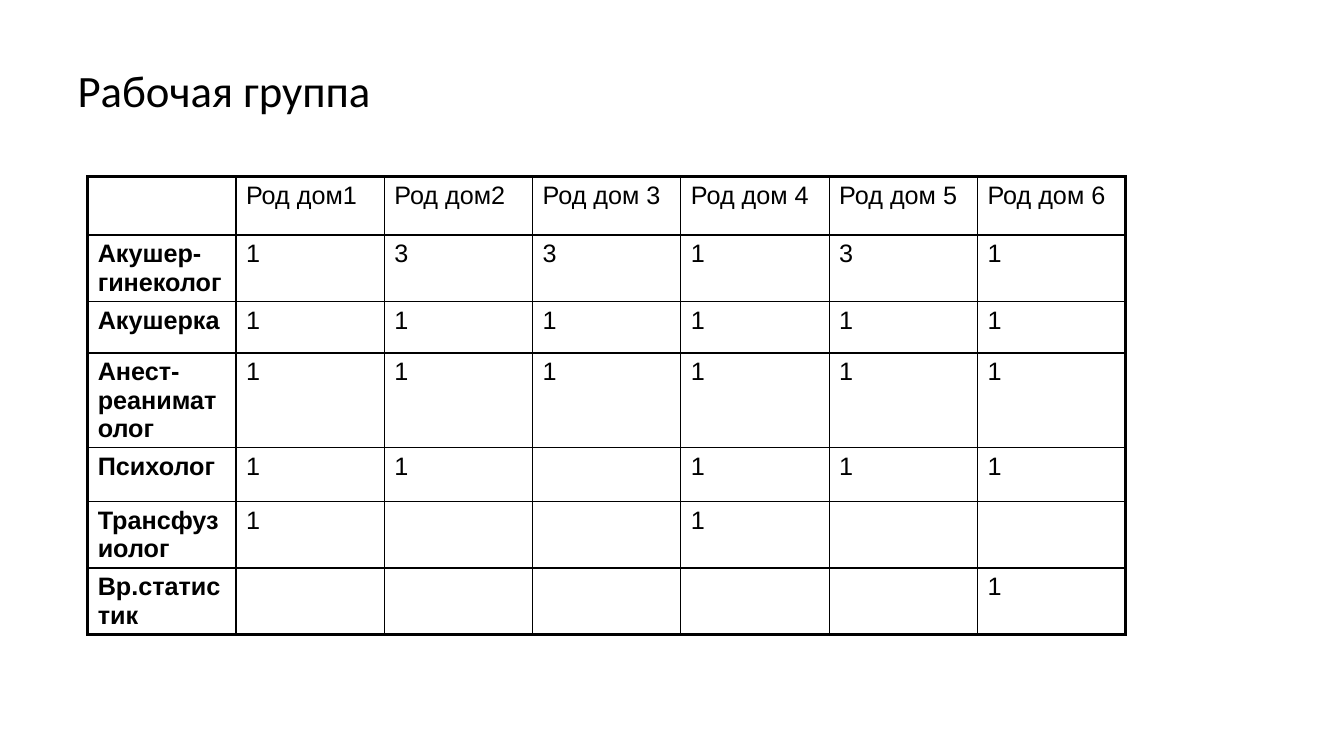
from lxml import etree
from pptx import Presentation
from pptx import util as u
from pptx.dml.color import RGBColor
from pptx.enum import text
from pptx.oxml import ns

BLACK = RGBColor(0, 0, 0)
THIN, THICK = 1, 2.25
ROWS = [
    ("", "Род дом1", "Род дом2", "Род дом 3", "Род дом 4", "Род дом 5", "Род дом 6"),
    ("Акушер-гинеколог", "1", "3", "3", "1", "3", "1"),
    ("Акушерка", "1", "1", "1", "1", "1", "1"),
    ("Анест-реаниматолог", "1", "1", "1", "1", "1", "1"),
    ("Психолог", "1", "1", "", "1", "1", "1"),
    ("Трансфузиолог", "1", "", "", "1", "", ""),
    ("Вр.статистик", "", "", "", "", "", "1"),
]
HEIGHTS = [1.47, 1.35, 1.3, 1.35, 1.35, 1.24, 1.35]


def style(item, values):
    for name, value in values.items():
        setattr(item, name, value)


def write(para, words, size, face, bold=False):
    run = para.add_run()
    run.text = words
    style(run.font, {"size": u.Pt(size), "name": face, "bold": bold})
    run.font.color.rgb = BLACK


def border(cell, side, width):
    props = cell._tc.get_or_add_tcPr()
    line = etree.SubElement(props, ns.qn(f"a:ln{side}"), w=str(u.Pt(width)))
    fill = etree.SubElement(line, ns.qn("a:solidFill"))
    etree.SubElement(fill, ns.qn("a:srgbClr"), val=str(BLACK))


def title(slide, left, top, width, height):
    shape = slide.shapes.title
    style(shape, {"left": u.Cm(left), "top": u.Cm(top),
                  "width": u.Cm(width), "height": u.Cm(height)})
    style(shape.text_frame, {"vertical_anchor": text.MSO_ANCHOR.MIDDLE,
                             "word_wrap": True})
    para = shape.text_frame.paragraphs[0]
    style(para, {"alignment": text.PP_ALIGN.LEFT, "line_spacing": 0.9})
    write(para, "Рабочая группа", 32, "Calibri")


def staff(slide, left, top, width):
    count, wide = len(ROWS), len(ROWS[0])
    frame = slide.shapes.add_table(count, wide, u.Cm(left), u.Cm(top),
                                   u.Cm(width), u.Cm(sum(HEIGHTS)))
    table = frame.table
    style(table, {"first_row": False, "horz_banding": False})
    for col in table.columns:
        col.width = u.Cm(width / wide)
    for r, (row, height) in enumerate(zip(ROWS, HEIGHTS)):
        table.rows[r].height = u.Cm(height)
        for c, words in enumerate(row):
            cell = table.cell(r, c)
            edges = {"L": c == 0, "R": c == wide - 1,
                     "T": r == 0, "B": r == count - 1}
            for side, outer in edges.items():
                border(cell, side, THICK if outer else THIN)
            cell.fill.background()
            if words:
                write(cell.text_frame.paragraphs[0], words, 18, "Arial", c == 0)


def main():
    deck = Presentation()
    style(deck, {"slide_width": u.Cm(33.87), "slide_height": u.Cm(19.05)})
    slide = deck.slides.add_slide(deck.slide_layouts[5])
    title(slide, 1.7, 0.76, 30.48, 3.18)
    staff(slide, 2.21, 4.45, 26.16)
    deck.save("out.pptx")


if __name__ == "__main__":
    main()
